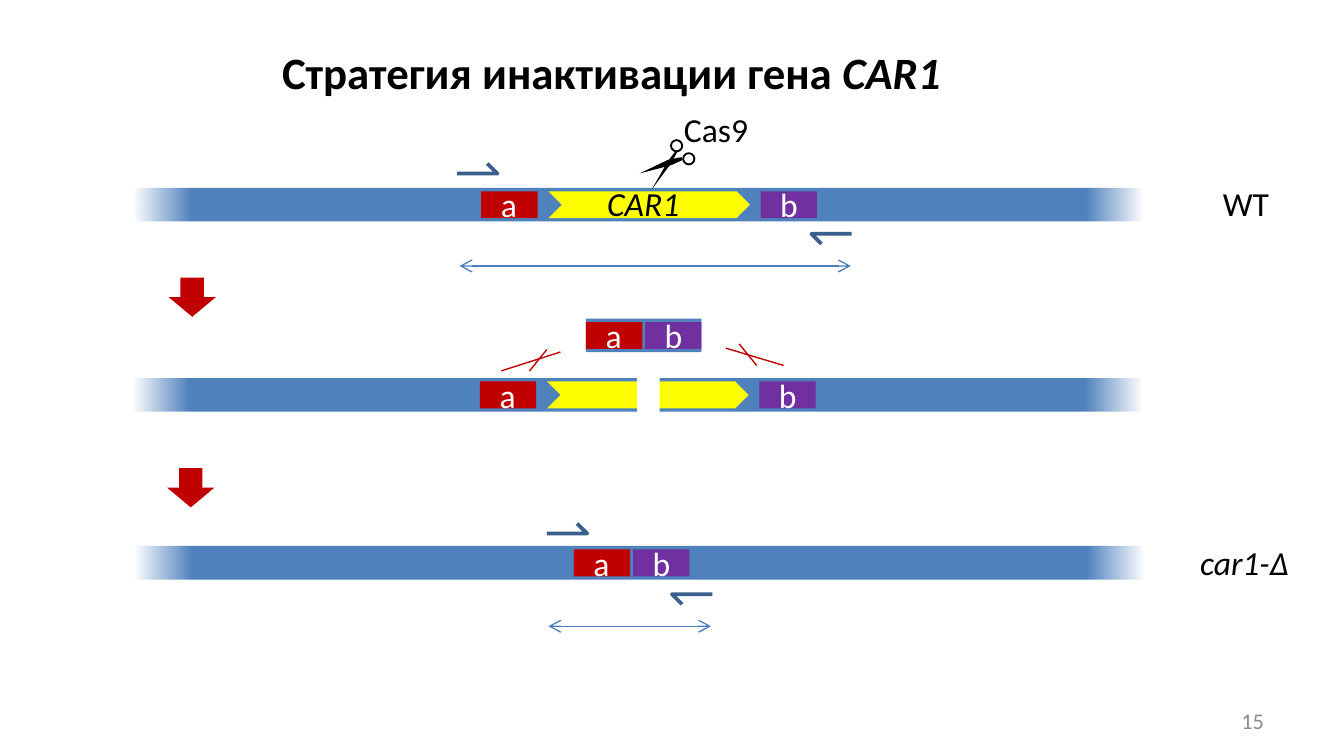
from lxml.etree import SubElement
from pptx import Presentation
from pptx.dml.color import RGBColor
from pptx.enum.shapes import MSO_CONNECTOR, MSO_SHAPE
from pptx.enum.text import MSO_ANCHOR, PP_ALIGN
from pptx.oxml.ns import qn
from pptx.util import Pt

THEME = {
    "font": "Calibri",
    "title": 24, "label": 18, "number": 12,
    "black": "000000", "white": "FFFFFF", "grey": "8C8C8C",
    "strand": "4F81BD", "gene": "FFFF00", "red": "C00000",
    "purple": "7030A0", "primer": "3A5F8C", "span": "4B7EBC",
}
STRAND_WIDTH, STRAND_HEIGHT = 540, 18
ARM_WIDTH, ARM_HEIGHT, ARM_INSET = 30.2, 14.4, 1.9
GENE_WIDTH = 108
FADE_WIDTH, FADE_HEIGHT = 30.4, 21
ARMS = {"a": ("red", 23), "b": ("purple", 24.5)}

STRANDS = [
    {"at": (72, 100.6), "gene": 221.8, "arms": {"a": 185.8, "b": 335.5}},
    {"at": (71.3, 202.5), "gene": 221.8, "arms": {"a": 185.8, "b": 335.5}},
    {"at": (72.7, 292.5), "gene": None, "arms": {"a": 234.7, "b": 266.4}},
]
DONOR = {"at": (313.9, 170.7), "width": 61.9, "arms": {"a": 0, "b": 31.7}}
BREAK = (341.3, 198, 12.2, 28)
CROSSOVERS = [
    (293, 187.2, 283.7, 198.7), (268.6, 198.7, 300.2, 188.6),
    (396, 184.3, 405.4, 195.8), (419.8, 195.8, 388.8, 186.5),
]
STEPS = [(90.4, 148.7), (89.6, 250.8)]
FORWARD = [(0, 5.4), (21.6, 5.4), (16.2, 0)]
REVERSE = [(21.6, 0), (0, 0), (5.4, 5.4)]
PRIMERS = [
    (244.9, 87.6, FORWARD), (434.7, 125.3, REVERSE),
    (293, 280.5, FORWARD), (360, 318.3, REVERSE),
]
SPANS = [(246.2, 455.8, 142.5), (293.8, 380.9, 335.5)]
LABELS = [
    ("CAR1", 318.2, 94.3, 53.3, True), ("Cas9", 359.3, 54.7, 49, False),
    ("WT", 648, 94.3, 39.6, False), ("car1-Δ", 635.8, 286.6, 67, True),
]
RINGS = [(359.5, 75.1), (366, 82.1)]
BLADES = [
    [(349.2, 101.5), (357.8, 86.4), (362.2, 80.6), (362.9, 81.4), (359.3, 87.8)],
    [(342.7, 92.9), (359.3, 88.6), (365.8, 85.7), (365, 84.2), (357.8, 85.7)],
]

presentation = Presentation()
presentation.slide_width, presentation.slide_height = Pt(720), Pt(405)
slide = presentation.slides.add_slide(presentation.slide_layouts[6])
shapes = slide.shapes


def color(name):
    return RGBColor.from_string(THEME[name])


def paint(shape, fill=None, line=None, weight=1):
    shape.shadow.inherit = False
    if fill:
        shape.fill.solid()
        shape.fill.fore_color.rgb = color(fill)
    else:
        shape.fill.background()
    if line:
        shape.line.color.rgb = color(line)
        shape.line.width = Pt(weight)
    else:
        shape.line.fill.background()
    return shape


def add_block(kind, left, top, width, height, fill=None, line=None):
    shape = shapes.add_shape(kind, Pt(left), Pt(top), Pt(width), Pt(height))
    return paint(shape, fill, line)


def add_text(runs, left, top, width, height=29, size="label", ink="black", bold=False, wrap=False):
    box = shapes.add_textbox(Pt(left), Pt(top), Pt(width), Pt(height))
    box.text_frame.word_wrap = wrap
    for text, italic in runs:
        run = box.text_frame.paragraphs[0].add_run()
        run.text = text
        font = run.font
        font.name, font.size = THEME["font"], Pt(THEME[size])
        font.bold, font.italic, font.color.rgb = bold, italic, color(ink)
    return box


def add_line(x1, y1, x2, y2, ink, arrows=False):
    line = shapes.add_connector(MSO_CONNECTOR.STRAIGHT, Pt(x1), Pt(y1), Pt(x2), Pt(y2))
    line.line.color.rgb = color(ink)
    line.line.width = Pt(0.75)
    if arrows:
        outline = line.line._get_or_add_ln()
        for end in ("a:headEnd", "a:tailEnd"):
            SubElement(outline, qn(end), type="arrow")
    SubElement(line._element.spPr, qn("a:effectLst"))


def add_outline(points, closed, fill=None, line=None, weight=1):
    corners = [(Pt(x), Pt(y)) for x, y in points]
    builder = shapes.build_freeform(*corners[0])
    builder.add_line_segments(corners[1:], close=closed)
    paint(builder.convert_to_shape(), fill, line, weight)


def add_fade(left, top, opacities):
    fade = add_block(MSO_SHAPE.RECTANGLE, left, top, FADE_WIDTH, FADE_HEIGHT)
    fade.fill.gradient()
    fade.fill.gradient_angle = 0
    for stop, position, opacity in zip(fade.fill.gradient_stops, (0, 1), opacities):
        stop.position = position
        stop.color.rgb = color("white")
        tint = stop._gs.find(qn("a:srgbClr"))
        SubElement(tint, qn("a:alpha"), val=str(opacity * 1000))


def add_arms(left, top, arms):
    for name, offset in arms.items():
        fill, text_width = ARMS[name]
        add_block(MSO_SHAPE.RECTANGLE, left + offset, top + ARM_INSET, ARM_WIDTH, ARM_HEIGHT, fill)
        add_text([(name, False)], left + offset + 3.4, top - 5.4, text_width, ink="white")


def add_strand(at, gene, arms):
    left, top = at
    add_block(MSO_SHAPE.RECTANGLE, left, top, STRAND_WIDTH, STRAND_HEIGHT, "strand")
    add_fade(left + STRAND_WIDTH - FADE_WIDTH, top, (0, 100))
    add_fade(left - 0.5, top, (100, 0))
    if gene is not None:
        add_block(MSO_SHAPE.CHEVRON, left + gene, top + ARM_INSET, GENE_WIDTH, ARM_HEIGHT, "gene")
    add_arms(left, top, arms)


add_text([("Стратегия инактивации гена ", False), ("CAR1", True)],
         144, 20.2, 370.8, 36, size="title", bold=True)
for strand in STRANDS:
    add_strand(**strand)
add_block(MSO_SHAPE.RECTANGLE, *BREAK, "white")
add_block(MSO_SHAPE.RECTANGLE, *DONOR["at"], DONOR["width"], STRAND_HEIGHT, "strand")
add_arms(*DONOR["at"], DONOR["arms"])

for crossover in CROSSOVERS:
    add_line(*crossover, "red")
for left, top in STEPS:
    add_block(MSO_SHAPE.DOWN_ARROW, left, top, 25.2, 21, "red")
for left, top, points in PRIMERS:
    add_outline([(left + x, top + y) for x, y in points], False, line="primer", weight=2)
for start, end, height in SPANS:
    add_line(start, height, end, height, "span", arrows=True)
for text, left, top, width, italic in LABELS:
    add_text([(text, italic)], left, top, width)

for left, top in RINGS:
    add_block(MSO_SHAPE.OVAL, left, top, 6, 6, line="black")
for blade in BLADES:
    add_outline(blade, True, fill="black")

number = add_text([("15", False)], 516.2, 375.1, 168, 21.6, size="number", ink="grey", wrap=True)
number.text_frame.vertical_anchor = MSO_ANCHOR.MIDDLE
number.text_frame.paragraphs[0].alignment = PP_ALIGN.RIGHT

presentation.save("out.pptx")
